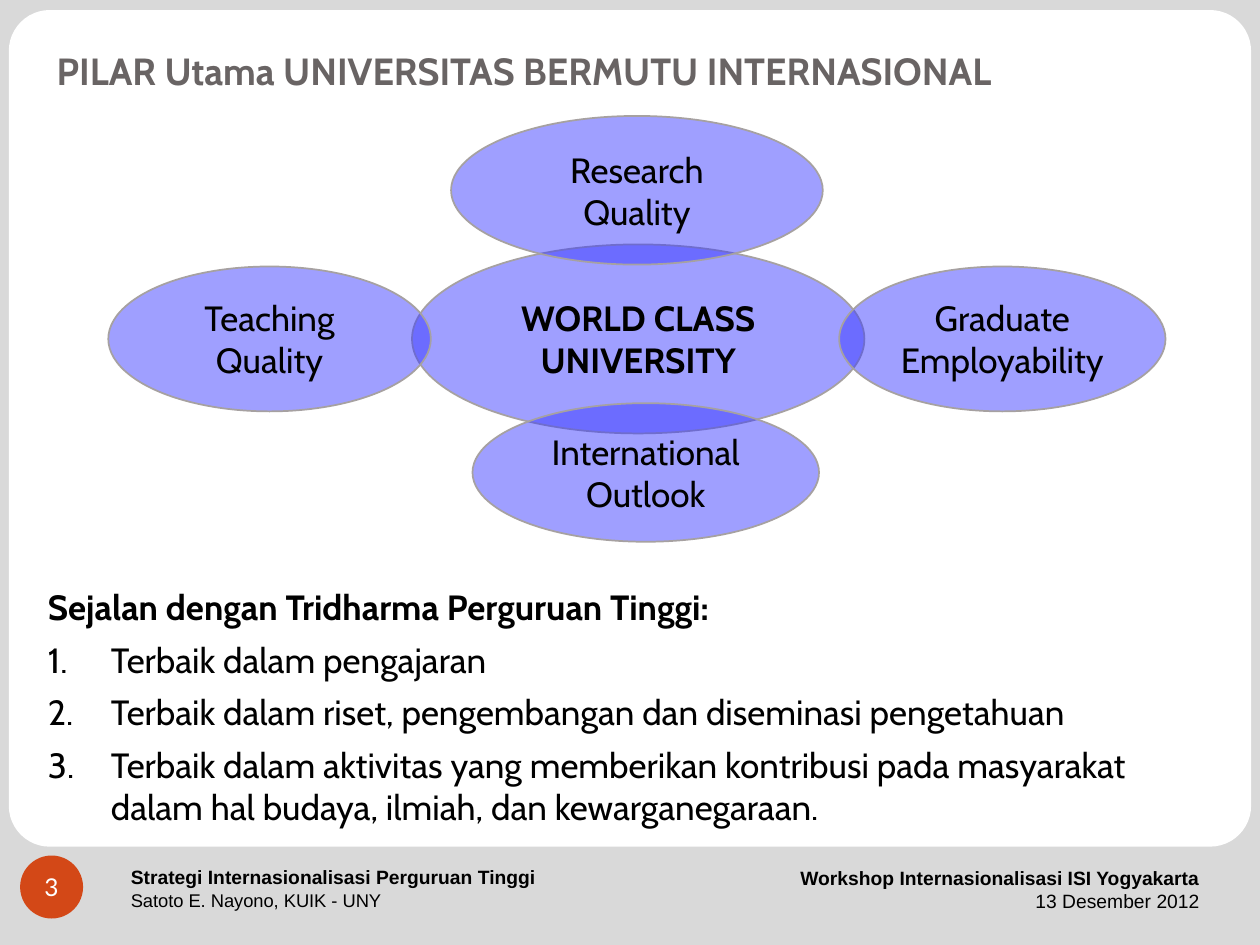
from dataclasses import dataclass

from lxml import etree
from pptx import Presentation
from pptx import util as u
from pptx.dml.color import RGBColor
from pptx.enum import shapes, text
from pptx.oxml import ns

COLS, ROWS = 100, 75
AL, ANC = text.PP_ALIGN, text.MSO_ANCHOR


@dataclass(frozen=True)
class Theme:
    frame: str = "D9D9D9"
    paper: str = "FFFFFF"
    ink: str = "000000"
    title: str = "696464"
    accent: str = "D34817"
    pillar: str = "3333FF"
    outline: str = "A6A1A1"
    pillar_alpha: int = 47
    head_font: str = "Cabin"
    foot_font: str = "Arial"
    num_font: str = "Lato"
    title_size: float = 21.6
    body_size: float = 20
    num_size: float = 14
    foot_size: float = 11
    foot_small: float = 10.5


T = Theme()
prs = Presentation()
prs.slide_width, prs.slide_height = u.Inches(10), u.Inches(7.5)


def grid(x, y, w, h):
    cw, rh = prs.slide_width / COLS, prs.slide_height / ROWS
    return [round(v) for v in (x * cw, y * rh, w * cw, h * rh)]


def place(sp, box):
    sp.left, sp.top, sp.width, sp.height = grid(*box)


def write(p, txt, size=T.body_size, font=T.head_font, color=T.ink, bold=False,
          align=AL.LEFT, before=0):
    p.alignment, p.space_before = align, u.Pt(before)
    r = p.add_run()
    r.text = txt
    r.font.size, r.font.name, r.font.bold = u.Pt(size), font, bold
    r.font.color.rgb = RGBColor.from_string(color)


def bullet(p, tag, indent=0, **attrs):
    ppr = p._p.get_or_add_pPr()
    ppr.set("marL", str(u.Inches(indent)))
    ppr.set("indent", str(-u.Inches(indent)))
    etree.SubElement(ppr, ns.qn(tag), **attrs)


def shape(s, kind, box, fill, line=None, alpha=None):
    sp = s.shapes.add_shape(kind, *grid(*box))
    sp.shadow.inherit = False
    sp.fill.solid()
    sp.fill.fore_color.rgb = RGBColor.from_string(fill)
    if alpha:
        clr = sp.fill._xPr.find(".//" + ns.qn("a:srgbClr"))
        etree.SubElement(clr, ns.qn("a:alpha"), val=str(alpha * 1000))
    if line:
        sp.line.color.rgb, sp.line.width = RGBColor.from_string(line), u.Pt(1)
    else:
        sp.line.fill.background()
    return sp


def frame(s, box):
    x, y, w, h = box
    shape(s, shapes.MSO_SHAPE.RECTANGLE, box, T.frame)
    sp = shape(s, shapes.MSO_SHAPE.ROUNDED_RECTANGLE,
               (x + 0.7, y + 0.8, w - 1.4, h - 8.6), T.paper)
    sp.adjustments[0] = 0.049


def footer_text(s, box, lines, align):
    tf = s.shapes.add_textbox(*grid(*box)).text_frame
    tf.word_wrap, tf.vertical_anchor = True, ANC.MIDDLE
    for i, (txt, size) in enumerate(lines):
        p = tf.add_paragraph() if i else tf.paragraphs[0]
        write(p, txt, size=size, font=T.foot_font, bold=i == 0, align=align)


def footer(s, box):
    x, y, w, h = box
    footer_text(s, (x + 7.8, y, 43.3, h),
                [("Strategi Internasionalisasi Perguruan Tinggi", T.foot_size),
                 ("Satoto E. Nayono, KUIK - UNY", T.foot_small)], AL.LEFT)
    footer_text(s, (x + w - 33.7, y, 33.7, h + 0.2),
                [("Workshop Internasionalisasi ISI Yogyakarta", T.foot_size),
                 ("13 Desember 2012", T.foot_size)], AL.RIGHT)
    sp = shape(s, shapes.MSO_SHAPE.OVAL, (x, y - 0.1, h, h), T.accent)
    tf = sp.text_frame
    tf.word_wrap, tf.vertical_anchor = False, ANC.MIDDLE
    tf.margin_left = tf.margin_right = tf.margin_top = tf.margin_bottom = 0
    write(tf.paragraphs[0], "3", size=T.num_size, font=T.num_font,
          color=T.paper, align=AL.CENTER)


def pillars(s, box):
    x, y, w, h = box
    side = 11.5
    mid = 17.7 - side / 2
    parts = [
        ("WORLD CLASS UNIVERSITY", 24.1, 10.2, 35.9, 15, True),
        ("Teaching Quality", 0, mid, 25.6, side, False),
        ("Graduate Employability", w - 25.9, mid, 25.9, side, False),
        ("International Outlook", 28.9, h - 11, 27.5, 11, False),
        ("Research Quality", 27.2, 0, 29.5, 11.8, False),
    ]
    for txt, dx, dy, pw, ph, bold in parts:
        sp = shape(s, shapes.MSO_SHAPE.OVAL, (x + dx, y + dy, pw, ph),
                   T.pillar, T.outline, T.pillar_alpha)
        tf = sp.text_frame
        tf.word_wrap, tf.vertical_anchor = True, ANC.MIDDLE
        write(tf.paragraphs[0], txt, bold=bold, align=AL.CENTER)


def tridharma(s, sp, box):
    s.shapes.element.append(sp.element)
    place(sp, box)
    tf = sp.text_frame
    tf.word_wrap, tf.auto_size = True, text.MSO_AUTO_SIZE.NONE
    tf.vertical_anchor = ANC.TOP
    p = tf.paragraphs[0]
    bullet(p, "a:buNone")
    write(p, "Sejalan dengan Tridharma Perguruan Tinggi:", bold=True)
    for txt in (
        "Terbaik dalam pengajaran",
        "Terbaik dalam riset, pengembangan dan diseminasi pengetahuan",
        "Terbaik dalam aktivitas yang memberikan kontribusi pada masyarakat "
        "dalam hal budaya, ilmiah, dan kewarganegaraan.",
    ):
        p = tf.add_paragraph()
        bullet(p, "a:buAutoNum", indent=0.5, type="arabicPeriod")
        write(p, txt, before=6)


def title(s, sp, box):
    s.shapes.element.append(sp.element)
    place(sp, box)
    tf = sp.text_frame
    tf.word_wrap, tf.auto_size = True, text.MSO_AUTO_SIZE.NONE
    tf.vertical_anchor, tf.margin_bottom = ANC.BOTTOM, u.Inches(0.1)
    write(tf.paragraphs[0], "PILAR Utama UNIVERSITAS BERMUTU INTERNASIONAL",
          size=T.title_size, color=T.title, bold=True)


def main():
    s = prs.slides.add_slide(prs.slide_layouts[1])
    head, body = s.shapes.title, s.placeholders[1]
    frame(s, (0, 0, COLS, ROWS))
    footer(s, (1.6, 68, 94.6, 5))
    pillars(s, (8.6, 9.2, 83.9, 33.8))
    tridharma(s, body, (2.8, 46, 94.5, 23.7))
    title(s, head, (3.5, 0.5, 85, 7.9))
    prs.save("out.pptx")


if __name__ == "__main__":
    main()
